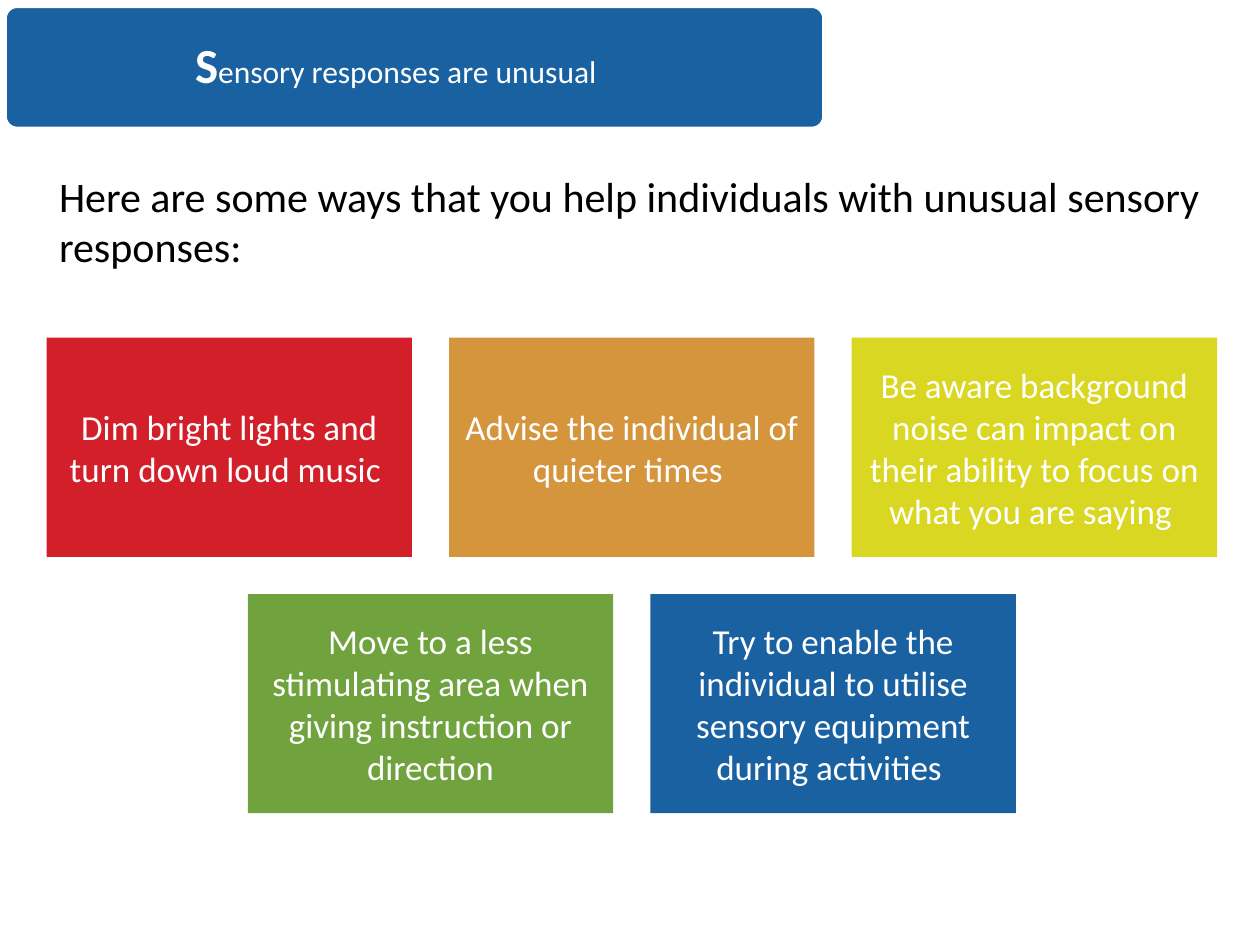
from dataclasses import dataclass

from pptx import Presentation
from pptx.dml.color import RGBColor
from pptx.enum.shapes import MSO_SHAPE
from pptx.enum.text import MSO_ANCHOR, PP_ALIGN
from pptx.util import Inches, Pt


@dataclass(frozen=True)
class Theme:
    font: str = "Calibri"
    white: str = "FFFFFF"
    black: str = "000000"
    red: str = "D31F29"
    orange: str = "D5953C"
    yellow: str = "D9D721"
    green: str = "70A33E"
    blue: str = "1A61A2"
    initial_size: int = 28
    intro_size: int = 24
    card_size: int = 20
    title_size: int = 18


THEME = Theme()
SLIDE_WIDTH, SLIDE_HEIGHT = 10, 7.5
GRID_LEFT, GRID_TOP, GRID_WIDTH = 0.37, 2.68, 9.29
CARD_WIDTH, CARD_HEIGHT, GAP = 2.9, 1.74, 0.295

CARD_ROWS = [
    [
        ("Dim bright lights and turn down loud music ", THEME.red),
        ("Advise the individual of quieter times ", THEME.orange),
        ("Be aware background noise can impact on their ability to focus "
         "on what you are saying ", THEME.yellow),
    ],
    [
        ("Move to a less stimulating area when giving instruction or direction",
         THEME.green),
        ("Try to enable the individual to utilise sensory equipment "
         "during activities ", THEME.blue),
    ],
]


def style_run(run, size, color, bold=False):
    run.font.name = THEME.font
    run.font.size = Pt(size)
    run.font.bold = bold
    run.font.color.rgb = RGBColor.from_string(color)


def set_margins(frame, margin):
    frame.margin_left = frame.margin_right = Inches(margin)
    frame.margin_top = frame.margin_bottom = Inches(margin)


def add_panel(slide, preset, left, top, width, height, fill, margin):
    """Add a filled, borderless shape with vertically centred text."""
    panel = slide.shapes.add_shape(
        preset, Inches(left), Inches(top), Inches(width), Inches(height))
    panel.shadow.inherit = False
    panel.fill.solid()
    panel.fill.fore_color.rgb = RGBColor.from_string(fill)
    panel.line.fill.background()
    frame = panel.text_frame
    frame.word_wrap = True
    frame.vertical_anchor = MSO_ANCHOR.MIDDLE
    set_margins(frame, margin)
    return panel


def add_banner(slide, initial, rest):
    banner = add_panel(slide, MSO_SHAPE.ROUNDED_RECTANGLE,
                       0.04, 0.05, 6.5, 0.97, THEME.blue, 0.12)
    banner.adjustments[0] = 0.1
    banner.line.color.rgb = RGBColor.from_string(THEME.white)
    banner.line.width = Pt(2)
    banner.text_frame.margin_left = Inches(1.48)
    title = banner.text_frame.paragraphs[0]
    title.alignment = PP_ALIGN.LEFT
    title.line_spacing = 0.9
    for text, size, bold in [(initial, THEME.initial_size, True),
                             (rest, THEME.title_size, False)]:
        run = title.add_run()
        run.text = text
        style_run(run, size, THEME.white, bold)


def add_intro(slide, text):
    intro = slide.shapes.add_textbox(
        Inches(GRID_LEFT), Inches(1.3), Inches(GRID_WIDTH), Inches(0.91))
    frame = intro.text_frame
    frame.word_wrap = True
    frame.text = text
    style_run(frame.paragraphs[0].runs[0], THEME.intro_size, THEME.black)


def add_card(slide, left, top, text, fill):
    card = add_panel(slide, MSO_SHAPE.RECTANGLE, left, top,
                     CARD_WIDTH, CARD_HEIGHT, fill, 0.08)
    card.text_frame.text = text
    advice = card.text_frame.paragraphs[0]
    advice.alignment = PP_ALIGN.CENTER
    style_run(advice.runs[0], THEME.card_size, THEME.white)


def add_card_rows(slide, rows):
    """Lay out each row of cards centred within the grid width."""
    for row_index, row in enumerate(rows):
        row_width = len(row) * (CARD_WIDTH + GAP) - GAP
        row_left = GRID_LEFT + (GRID_WIDTH - row_width) / 2
        top = GRID_TOP + row_index * (CARD_HEIGHT + GAP)
        for column, (text, fill) in enumerate(row):
            add_card(slide, row_left + column * (CARD_WIDTH + GAP),
                     top, text, fill)


def main():
    deck = Presentation()
    deck.slide_width = Inches(SLIDE_WIDTH)
    deck.slide_height = Inches(SLIDE_HEIGHT)
    slide = deck.slides.add_slide(deck.slide_layouts[6])
    add_intro(slide, "Here are some ways that you help individuals "
                     "with unusual sensory responses:")
    add_card_rows(slide, CARD_ROWS)
    add_banner(slide, "S", "ensory responses are unusual")
    deck.save("out.pptx")


if __name__ == "__main__":
    main()
